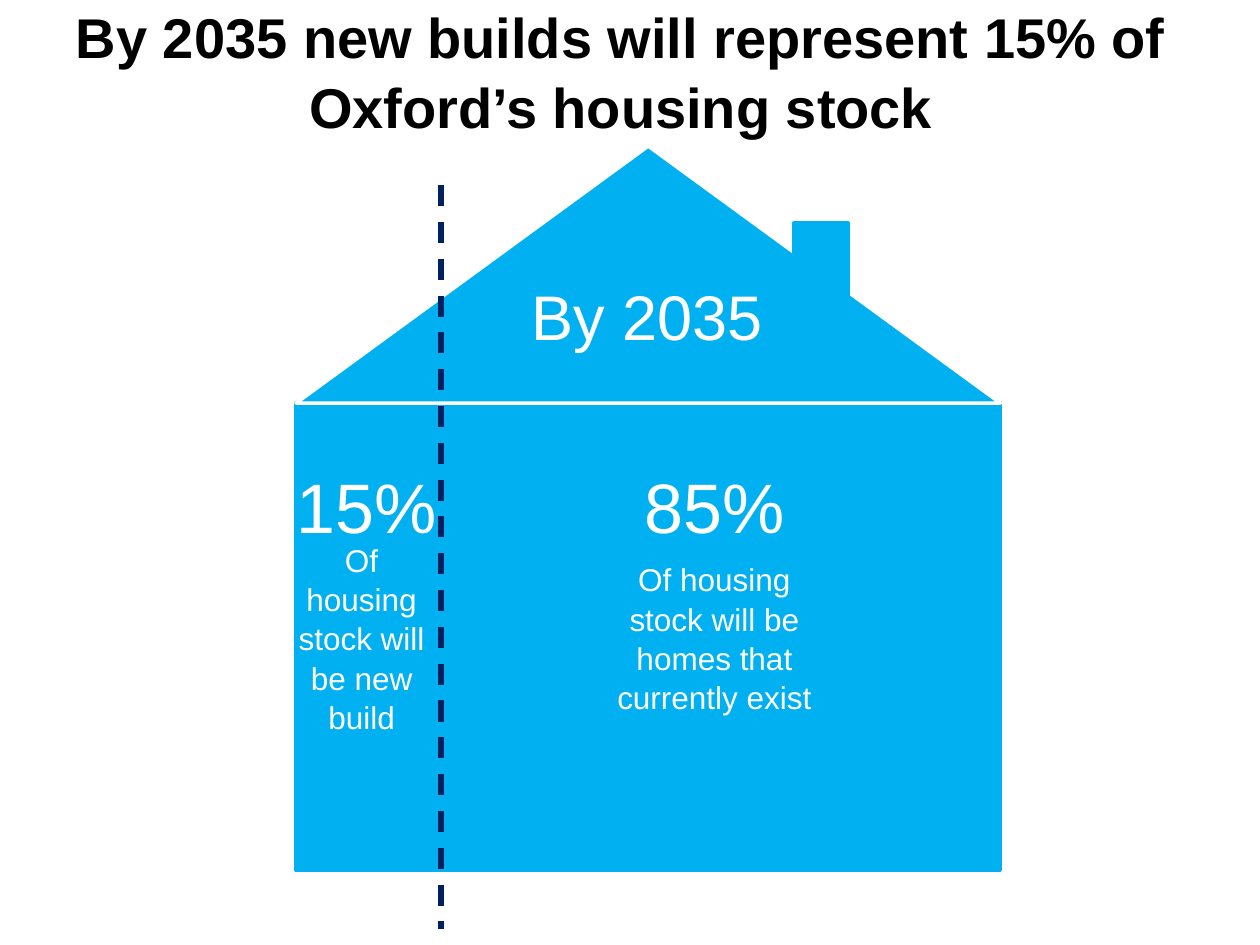
from lxml import etree
from pptx import Presentation
from pptx.dml.color import RGBColor
from pptx.enum import dml, shapes, text
from pptx.oxml.ns import qn
from pptx.util import Inches, Pt

FONT = "Arial"
BLUE, NAVY, WHITE, BLACK = "00B0F0", "002060", "FFFFFF", "000000"

TITLE = "By 2035 new builds will represent 15% of Oxford’s housing stock"

# House: left edge, width, roof peak, eaves and ground
LEFT, WIDTH, PEAK, EAVES, GROUND = 2.35, 5.59, 1.16, 3.2, 6.91
DIVIDER_X, DIVIDER_TOP, DIVIDER_BOTTOM = 3.5, 1.47, 7.37

HOUSE_PARTS = [  # preset, left, top, width, height, outline
    (shapes.MSO_SHAPE.RECTANGLE, LEFT, EAVES, WIDTH, GROUND - EAVES, BLUE),
    (shapes.MSO_SHAPE.ISOSCELES_TRIANGLE, LEFT, PEAK, WIDTH, EAVES - PEAK, WHITE),
    (shapes.MSO_SHAPE.RECTANGLE, 6.3, 1.77, 0.43, 0.65, BLUE),
]
LABELS = [  # words, centre x, top, width, height, size, side inset
    ("Of housing stock will be new build", 2.87, 4.56, 1.26, 1, 18, 0.1),
    ("Of housing stock will be homes that currently exist", 5.67, 4.56, 1.97, 1, 18, 0.1),
    ("15%", 2.91, 3.5, 1.35, 1, 40, 0),
    ("85%", 5.67, 3.5, 1.35, 1, 40, 0),
    ("By 2035", 5.14, 2.17, 2.13, 0.64, 36, 0),
]


def colour(value):
    return RGBColor.from_string(value)


def write(shape, words, size, shade, bold=False, inset=0.1):
    """Put one centred paragraph in the middle of a shape."""
    frame = shape.text_frame
    frame.word_wrap = True
    frame.auto_size = text.MSO_AUTO_SIZE.NONE
    frame.vertical_anchor = text.MSO_ANCHOR.MIDDLE
    frame.margin_left = frame.margin_right = Inches(inset)
    frame.text = words
    para = frame.paragraphs[0]
    para.alignment = text.PP_ALIGN.CENTER
    para.line_spacing = 1.04
    para.font.name, para.font.size, para.font.bold = FONT, Pt(size), bold
    para.font.color.rgb = colour(shade)


def add_house(slide):
    house = slide.shapes.add_group_shape()
    for preset, left, top, width, height, outline in HOUSE_PARTS:
        part = house.shapes.add_shape(preset, *map(Inches, (left, top, width, height)))
        part.shadow.inherit = False
        part.fill.solid()
        part.fill.fore_color.rgb = colour(BLUE)
        part.line.color.rgb = colour(outline)
        part.line.width = Pt(2)


def add_divider(slide):
    divider = slide.shapes.add_connector(
        shapes.MSO_CONNECTOR.STRAIGHT,
        *map(Inches, (DIVIDER_X, DIVIDER_TOP, DIVIDER_X, DIVIDER_BOTTOM)))
    divider.line.color.rgb = colour(NAVY)
    divider.line.width = Pt(3)
    divider.line.dash_style = dml.MSO_LINE.DASH
    etree.SubElement(divider._element.spPr, qn("a:effectLst"))


def main():
    deck = Presentation()
    deck.slide_width, deck.slide_height = Inches(10), Inches(7.5)
    slide = deck.slides.add_slide(deck.slide_layouts[5])

    title = slide.shapes.title
    title.left, title.top, title.width, title.height = map(Inches, (0.43, 0.21, 9, 0.69))
    write(title, TITLE, 32, BLACK, bold=True)

    add_house(slide)
    add_divider(slide)
    for words, centre, top, width, height, size, inset in LABELS:
        box = slide.shapes.add_textbox(
            *map(Inches, (centre - width / 2, top, width, height)))
        write(box, words, size, WHITE, inset=inset)

    deck.save("out.pptx")


if __name__ == "__main__":
    main()
